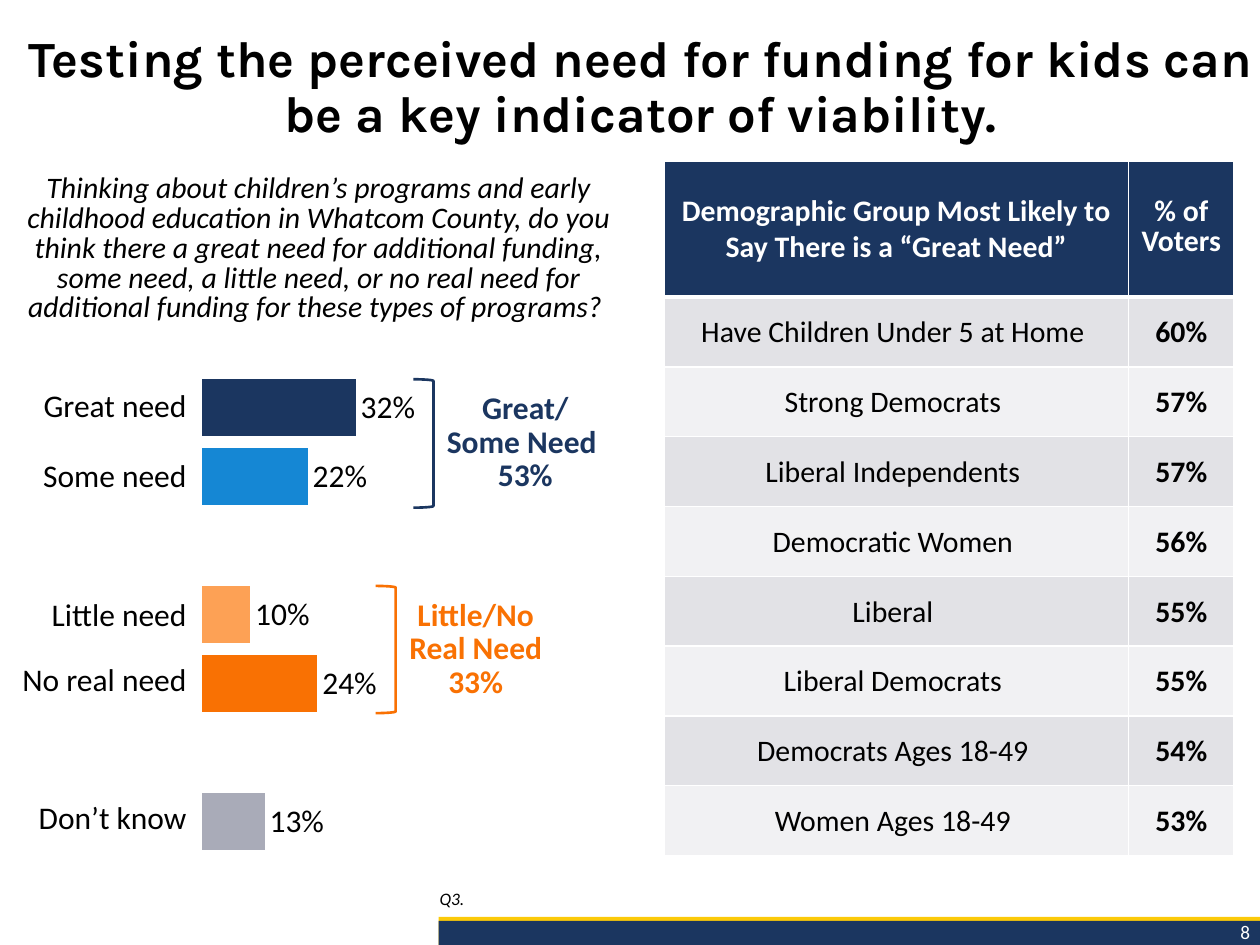
from lxml import etree
from pptx import Presentation
from pptx.chart.data import CategoryChartData
from pptx.dml.color import RGBColor
from pptx.enum.chart import XL_CHART_TYPE, XL_LABEL_POSITION, XL_TICK_LABEL_POSITION, XL_TICK_MARK
from pptx.enum.shapes import MSO_SHAPE
from pptx.enum.text import MSO_ANCHOR, PP_ALIGN
from pptx.oxml import parse_xml
from pptx.oxml.ns import nsdecls, qn
from pptx.util import Pt

LEFT, CENTER, RIGHT = PP_ALIGN.LEFT, PP_ALIGN.CENTER, PP_ALIGN.RIGHT
TOP, MIDDLE, BOTTOM = MSO_ANCHOR.TOP, MSO_ANCHOR.MIDDLE, MSO_ANCHOR.BOTTOM
RECTANGLE, BRACKET = MSO_SHAPE.RECTANGLE, MSO_SHAPE.RIGHT_BRACKET
BAR_CHART = XL_CHART_TYPE.BAR_CLUSTERED
OUTSIDE_END = XL_LABEL_POSITION.OUTSIDE_END
NO_LABELS, NO_TICKS = XL_TICK_LABEL_POSITION.NONE, XL_TICK_MARK.NONE

BLACK = RGBColor(0x00, 0x00, 0x00)
WHITE = RGBColor(0xFF, 0xFF, 0xFF)
NAVY = RGBColor(0x1B, 0x36, 0x60)
BLUE = RGBColor(0x15, 0x87, 0xD4)
GOLD = RGBColor(0xFC, 0xCA, 0x09)
ORANGE = RGBColor(0xF9, 0x71, 0x03)
PEACH = RGBColor(0xFD, 0xA1, 0x55)
GRAY = RGBColor(0xA9, 0xAB, 0xB8)
BANDS = (RGBColor(0xE2, 0xE2, 0xE6), RGBColor(0xF1, 0xF1, 0xF3))

ANSWERS = [
    ("Great need", 0.32, NAVY),
    ("Some need", 0.22, BLUE),
    (None, None, None),
    ("Little need", 0.10, PEACH),
    ("No real need", 0.24, ORANGE),
    (None, None, None),
    ("Don’t know", 0.13, GRAY),
]
LABEL_ROWS = (22.3, 40.3, 36.7, 42.5, 37.4, 36.7, 41.8)
GROUPS = [
    ("Have Children Under 5 at Home ", "60%"),
    ("Strong Democrats ", "57%"),
    ("Liberal Independents ", "57%"),
    ("Democratic Women ", "56%"),
    ("Liberal ", "55%"),
    ("Liberal Democrats ", "55%"),
    ("Democrats Ages 18-49 ", "54%"),
    ("Women Ages 18-49 ", "53%"),
]


def points(box):
    return [Pt(length) for length in box]


def write(frame, lines, size, color=BLACK, align=CENTER, font="Calibri",
          bold=False, italic=False, spacing=None):
    para = frame.paragraphs[0]
    para.alignment = align
    para.line_spacing = spacing
    for index, line in enumerate(lines):
        if index:
            para.add_line_break()
        span = para.add_run()
        span.text = line
        span.font.size = Pt(size)
        span.font.name = font
        span.font.bold = bold
        span.font.italic = italic
        span.font.color.rgb = color


def add_text(page, box, lines, size, anchor=TOP, **style):
    frame = page.shapes.add_textbox(*points(box)).text_frame
    frame.word_wrap = True
    frame.vertical_anchor = anchor
    write(frame, lines, size, **style)


def add_footer(page, box):
    left, top, width, height = box
    for color, offset in ((GOLD, 0), (NAVY, 2.2)):
        bar = page.shapes.add_shape(RECTANGLE, *points((left, top + offset, width, height - offset)))
        bar.shadow.inherit = False
        bar.fill.solid()
        bar.fill.fore_color.rgb = color
        bar.line.fill.background()
    add_text(page, (left + width - 105, top - 1.4, 106.4, 21), ["8"], 11, color=WHITE, align=RIGHT)
    add_text(page, (left - 6.5, top - 39.5, 474.5, 38.9), ["Q3."], 10, anchor=BOTTOM,
             align=LEFT, italic=True, spacing=0.9)


def set_plot_layout(chart, x, y, width, height):
    area = chart.element.find(".//" + qn("c:plotArea"))
    for old in area.findall(qn("c:layout")):
        area.remove(old)
    layout = etree.Element(qn("c:layout"))
    manual = etree.SubElement(layout, qn("c:manualLayout"))
    for tag, value in (("layoutTarget", "inner"), ("xMode", "edge"), ("yMode", "edge"),
                       ("x", x), ("y", y), ("w", width), ("h", height)):
        etree.SubElement(manual, qn("c:" + tag)).set("val", str(value))
    area.insert(0, layout)


def add_need_chart(page, box):
    data = CategoryChartData(number_format="0%")
    data.categories = [str(number + 1) for number in range(len(ANSWERS))]
    data.add_series("Series 1", [value for _, value, _ in ANSWERS])
    chart = page.shapes.add_chart(BAR_CHART, *points(box), data).chart
    chart.has_legend = False
    chart.has_title = False
    chart.font.name = "Calibri"
    chart.font.size = Pt(16)
    chart.font.color.rgb = BLACK
    set_plot_layout(chart, 0.047, 0.019, 0.921, 0.911)

    category_axis = chart.category_axis
    category_axis.reverse_order = True
    category_axis.tick_label_position = NO_LABELS
    category_axis.major_tick_mark = NO_TICKS
    category_axis.format.line.fill.background()
    value_axis = chart.value_axis
    value_axis.minimum_scale = 0
    value_axis.maximum_scale = 0.75
    value_axis.major_unit = 0.15
    value_axis.has_major_gridlines = False
    value_axis.visible = False

    plot = chart.plots[0]
    plot.gap_width = 21
    plot.vary_by_categories = False
    series = plot.series[0]
    series.format.fill.solid()
    series.format.fill.fore_color.rgb = BLUE
    for index, (_, _, color) in enumerate(ANSWERS):
        if color:
            fill = series.points[index].format.fill
            fill.solid()
            fill.fore_color.rgb = color
    labels = series.data_labels
    labels.show_value = True
    labels.position = OUTSIDE_END
    labels.number_format = "0%"
    labels.number_format_is_linked = False
    labels.font.size = Pt(18)
    labels.font.name = "Calibri"
    labels.font.color.rgb = BLACK


def set_margins(cell):
    cell.margin_left = cell.margin_right = cell.margin_top = Pt(0.7)
    cell.margin_bottom = Pt(0)


def add_answer_labels(page, box):
    table = page.shapes.add_table(len(ANSWERS), 1, *points(box)).table
    table.first_row = table.horz_banding = False
    for index, (label, _, _) in enumerate(ANSWERS):
        table.rows[index].height = Pt(LABEL_ROWS[index])
        cell = table.cell(index, 0)
        cell.fill.background()
        cell.vertical_anchor = BOTTOM
        set_margins(cell)
        if label:
            write(cell.text_frame, [label], 18, align=RIGHT)


def add_bracket(page, box, color, lines, text_box):
    bracket = page.shapes.add_shape(BRACKET, *points(box))
    bracket.shadow.inherit = False
    bracket.fill.background()
    bracket.line.color.rgb = color
    bracket.line.width = Pt(1.5)
    add_text(page, text_box, lines, 18, color=color, bold=True, spacing=Pt(19))


def set_borders(cell, bottom):
    properties = cell._tc.get_or_add_tcPr()
    for index, (side, width) in enumerate((("L", 1), ("R", 1), ("T", 1), ("B", bottom))):
        properties.insert(index, parse_xml(
            f'<a:ln{side} {nsdecls("a")} w="{Pt(width)}"><a:solidFill>'
            f'<a:srgbClr val="{WHITE}"/></a:solidFill></a:ln{side}>'))


def add_group_table(page, box):
    header_height = 77.6
    row_height = (box[3] - header_height) / len(GROUPS)
    rows = [("Demographic Group Most Likely to Say There is a “Great Need”", "% of Voters")] + GROUPS
    table = page.shapes.add_table(len(rows), 2, *points(box)).table
    for column, width in zip(table.columns, (265.5, box[2] - 265.5)):
        column.width = Pt(width)
    for row, texts in enumerate(rows):
        header = row == 0
        table.rows[row].height = Pt(header_height if header else row_height)
        for column, text in enumerate(texts):
            cell = table.cell(row, column)
            cell.vertical_anchor = MIDDLE
            cell.fill.solid()
            cell.fill.fore_color.rgb = NAVY if header else BANDS[(row - 1) % 2]
            set_borders(cell, 3 if header else 1)
            if not header:
                set_margins(cell)
            write(cell.text_frame, [text], 17, color=WHITE if header else BLACK,
                  bold=header or column == 1, spacing=Pt(17) if header and column else None)


def main():
    deck = Presentation()
    deck.slide_width, deck.slide_height = Pt(720), Pt(540)
    page = deck.slides.add_slide(deck.slide_layouts[6])
    add_footer(page, (250.6, 524, 469.4, 16))
    add_text(page, (6.5, 15.8, 720, 94.3),
             ["Testing the perceived need for funding for kids can be a key indicator of viability."],
             29, font="Karla", bold=True, spacing=0.9)
    add_need_chart(page, (105.1, 207.4, 223.2, 303.1))
    add_bracket(page, (236.2, 216.7, 11.5, 73.4), NAVY,
                ["Great/", "Some Need ", "53%"], (246.2, 221, 108, 64.8))
    add_bracket(page, (214.6, 334.8, 11.5, 72.7), ORANGE,
                ["Little/No Real Need", "33%"], (218.2, 339.1, 107.3, 64.8))
    add_answer_labels(page, (2.2, 221, 105.1, sum(LABEL_ROWS)))
    add_group_table(page, (379.4, 92.2, 325.8, 396.7))
    add_text(page, (6.5, 96.5, 351.4, 93.6),
             ["Thinking about children’s programs and early childhood education in Whatcom County, "
              "do you think there a great need for additional funding, some need, a little need, "
              "or no real need for additional funding for these types of programs? "],
             17, italic=True, spacing=Pt(17))
    deck.save("out.pptx")


if __name__ == "__main__":
    main()
